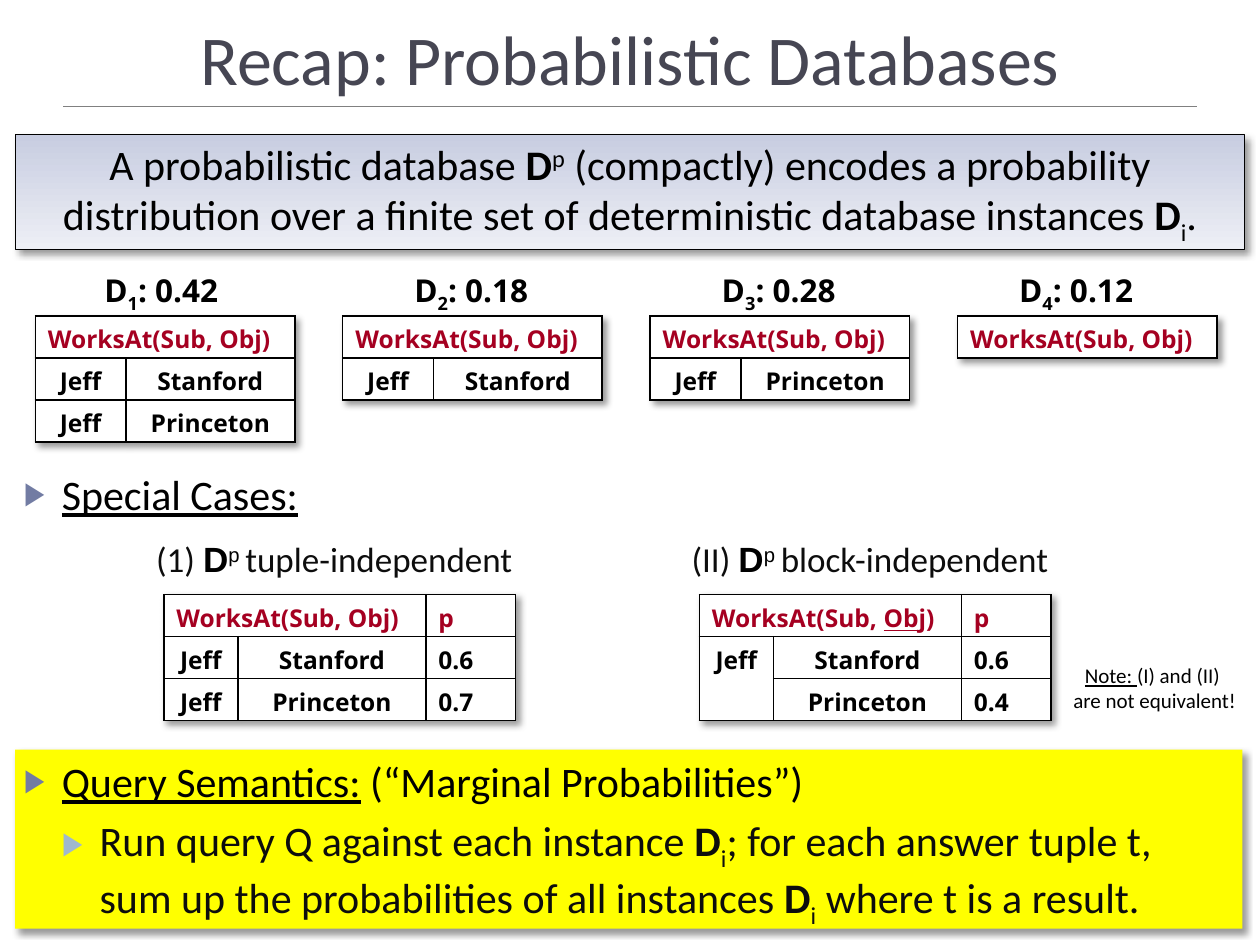
from lxml import etree
from pptx import Presentation
from pptx.dml.color import RGBColor
from pptx.enum.shapes import MSO_CONNECTOR, MSO_SHAPE
from pptx.enum.text import MSO_ANCHOR, MSO_AUTO_SIZE, PP_ALIGN
from pptx.oxml import parse_xml
from pptx.oxml.ns import nsdecls, qn
from pptx.util import Inches, Pt

BLACK, INK, RED = "000000", "0D0D0D", "A50021"
BASELINES = {"sub": "-25000", "sup": "30000"}
SHADOW = (
    f'<a:effectLst {nsdecls("a")}><a:outerShdw blurRad="50800" dist="38100" dir="2700000" '
    'algn="tl" rotWithShape="0"><a:srgbClr val="000000"><a:alpha val="40000"/></a:srgbClr>'
    "</a:outerShdw></a:effectLst>"
)
ROW_HEIGHT = 0.333


def color(value):
    return RGBColor.from_string(value)


def add_shadow(properties):
    for old in properties.findall(qn("a:effectLst")):
        properties.remove(old)
    properties.append(parse_xml(SHADOW))


def write(paragraph, runs, size, fill=BLACK, font="Calibri", bold=None, align=None):
    """Fill a paragraph; a run is a string or a tuple of text and b, u, sub, sup or Arial."""
    paragraph.font.size = Pt(size)
    paragraph.font.name = font
    paragraph.font.bold = bold
    paragraph.font.color.rgb = color(fill)
    paragraph.alignment = align
    for item in runs:
        text, *styles = (item,) if isinstance(item, str) else item
        run = paragraph.add_run()
        run.text = text
        for style in styles:
            if style == "b":
                run.font.bold = True
            elif style == "u":
                run.font.underline = True
            elif style == "Arial":
                run.font.name = style
                run.font.color.rgb = color(BLACK)
            else:
                run.font._element.set("baseline", BASELINES[style])


def add_text(slide, left, top, width, height, lines, size, wrap=False, **style):
    box = slide.shapes.add_textbox(Inches(left), Inches(top), Inches(width), Inches(height))
    frame = box.text_frame
    frame.word_wrap = wrap
    for index, runs in enumerate(lines):
        paragraph = frame.add_paragraph() if index else frame.paragraphs[0]
        write(paragraph, runs, size, **style)


def add_panel(slide, left, top, width, height):
    panel = slide.shapes.add_shape(
        MSO_SHAPE.RECTANGLE, Inches(left), Inches(top), Inches(width), Inches(height))
    panel.line.fill.background()
    return panel


def format_title(slide, left, top, width, height):
    title = slide.shapes.title
    title.left, title.top = Inches(left), Inches(top)
    title.width, title.height = Inches(width), Inches(height)
    title.text_frame.vertical_anchor = MSO_ANCHOR.BOTTOM
    title.text_frame.auto_size = MSO_AUTO_SIZE.NONE
    write(title.text_frame.paragraphs[0], ["Recap: Probabilistic Databases"], 40,
          "464653", align=PP_ALIGN.CENTER)
    bottom = Inches(top + height)
    rule = slide.shapes.add_connector(
        MSO_CONNECTOR.STRAIGHT, title.left, bottom, title.left + title.width, bottom)
    rule.line.color.rgb = color("808080")
    rule.line.width = Pt(0.25)
    add_shadow(rule._element.spPr)


def add_definition(slide, left, top, width, height):
    panel = add_panel(slide, left, top, width, height)
    panel.fill.gradient()
    panel.fill.gradient_angle = 270
    for stop, value in zip(panel.fill.gradient_stops, ("C8CDE1", "EDEFF5")):
        stop.color.rgb = color(value)
    panel.line.color.rgb = color(BLACK)
    panel.line.width = Pt(0.5)
    add_shadow(panel._element.spPr)
    write(panel.text_frame.paragraphs[0], [
        "A probabilistic database ", ("D", "b"), ("p", "sup"),
        " (compactly) encodes a probability distribution over a finite set of "
        "deterministic database instances ", ("D", "b"), ("i", "sub"), "."],
        24, align=PP_ALIGN.CENTER)


def add_bullet(paragraph, level, value, before):
    paragraph.level = level
    paragraph.space_before = Pt(before)
    properties = paragraph._p.get_or_add_pPr()
    properties.set("marL", str(Inches(0.3 * (level + 1))))
    properties.set("indent", str(Inches(-0.3)))
    bullet = (("buClr", {}), ("buSzPct", {"val": "76000"}),
              ("buFont", {"typeface": "Arial"}), ("buChar", {"char": "▶"}))
    position = len(properties.findall(qn("a:spcBef")))
    for offset, (tag, attributes) in enumerate(bullet):
        element = etree.Element(qn(f"a:{tag}"), attributes)
        if tag == "buClr":
            etree.SubElement(element, qn("a:srgbClr"), {"val": value})
        properties.insert(position + offset, element)


def format_body(slide, left, top, width, height):
    panel = add_panel(slide, 0.12, 5.95, 9.74, 1.42)
    panel.fill.solid()
    panel.fill.fore_color.rgb = color("FFFF00")
    add_shadow(panel._element.spPr)
    body = slide.placeholders[1]
    panel._element.addnext(body._element)
    body.left, body.top = Inches(left), Inches(top)
    body.width, body.height = Inches(width), Inches(height)
    frame = body.text_frame
    frame.auto_size = MSO_AUTO_SIZE.NONE
    points = [
        (0, "727CA3", 6, BLACK, [("Special Cases:", "u")]),
        (0, "727CA3", 135, BLACK, [("Query Semantics:", "u"), " (“Marginal Probabilities”)"]),
        (1, "9FB8CD", 5, INK, [
            "Run query Q against each instance ", ("D", "b"), ("i", "sub"),
            "; for each answer tuple t, sum up the probabilities of all instances ",
            ("D", "b"), ("i", "sub"), " where t is a result."]),
    ]
    for index, (level, bullet_color, before, fill, runs) in enumerate(points):
        paragraph = frame.add_paragraph() if index else frame.paragraphs[0]
        write(paragraph, runs, 24, fill)
        add_bullet(paragraph, level, bullet_color, before)


def format_cell(cell, runs, fill, align):
    cell.margin_top, cell.margin_bottom = Inches(0.05), 0
    cell.fill.solid()
    cell.fill.fore_color.rgb = color("FFFFFF")
    properties = cell._tc.get_or_add_tcPr()
    for position, side in enumerate("LRTB"):
        properties.insert(position, parse_xml(
            f'<a:ln{side} {nsdecls("a")} w="12700"><a:solidFill>'
            f'<a:srgbClr val="{BLACK}"/></a:solidFill></a:ln{side}>'))
    write(cell.text_frame.paragraphs[0], runs, 14, fill, "Noto Sans", True, align)


def add_relation(slide, left, top, widths, rows, header=("WorksAt(Sub, Obj)",)):
    """Draw a relation; a None cell joins the cell above it."""
    count = len(rows) + 1
    frame = slide.shapes.add_table(count, len(widths), Inches(left), Inches(top),
                                   Inches(sum(widths)), Inches(ROW_HEIGHT * count))
    table = frame.table
    table.first_row = table.horz_banding = False
    add_shadow_before_style(table._tbl.tblPr)
    for column, width in zip(table.columns, widths):
        column.width = Inches(width)
    titles = [header, [], ["p"]][:len(widths)]
    for column, runs in enumerate(titles):
        format_cell(table.cell(0, column), runs, RED, PP_ALIGN.LEFT)
    if len(widths) > 1:
        table.cell(0, 0).merge(table.cell(0, 1))
    for row, values in enumerate(rows, 1):
        for column, value in enumerate(values):
            align = PP_ALIGN.CENTER if column < 2 else PP_ALIGN.LEFT
            format_cell(table.cell(row, column), [value] if value else [], BLACK, align)
            if value is None:
                table.cell(row - 1, column).merge(table.cell(row, column))


def add_shadow_before_style(properties):
    add_shadow(properties)
    properties.insert(0, properties[-1])


def add_instances(slide, left, top, step):
    stanford, princeton = ("Jeff", "Stanford"), ("Jeff", "Princeton")
    instances = [("0.42", 0.73, [stanford, princeton]), ("0.18", 3.19, [stanford]),
                 ("0.28", 5.63, [princeton]), ("0.12", 7.99, [])]
    for index, (probability, caption_left, rows) in enumerate(instances):
        add_text(slide, caption_left, top, 1.2, 0.4,
                 [["D", (str(index + 1), "sub"), f": {probability}"]],
                 18, font="Noto Sans", bold=True)
        widths = (0.72, 1.34) if rows else (2.06,)
        add_relation(slide, left + step * index, top + 0.41, widths, rows)


def add_special_case(slide, left, top, number, kind, rows, **header):
    add_text(slide, left, top, 3.05, 0.44,
             [[f"({number}) ", ("D", "b", "Arial"), ("p ", "sup", "Arial"), kind]], 20, fill=INK)
    add_relation(slide, left + 0.16, top + 0.5, (0.59, 1.49, 0.71), rows, **header)


def main():
    presentation = Presentation()
    presentation.slide_width, presentation.slide_height = Inches(10), Inches(7.5)
    slide = presentation.slides.add_slide(presentation.slide_layouts[1])
    format_title(slide, 0.5, -0.01, 9, 0.85)
    format_body(slide, 0.09, 3.67, 9.76, 3.28)
    add_definition(slide, 0.12, 1.07, 9.76, 0.91)
    add_instances(slide, 0.28, 2.1, 2.44)
    add_special_case(slide, 1.14, 4.22, "1", "tuple-independent",
                     [("Jeff", "Stanford", "0.6"), ("Jeff", "Princeton", "0.7")])
    add_special_case(slide, 5.39, 4.22, "II", "block-independent",
                     [("Jeff", "Stanford", "0.6"), (None, "Princeton", "0.4")],
                     header=("WorksAt(Sub, ", ("Ob", "u"), "j)"))
    add_text(slide, 8.41, 5.21, 1.51, 0.5,
             [[("Note: ", "u"), "(I) and (II) "], ["are not equivalent!"]],
             12, wrap=True, align=PP_ALIGN.CENTER)
    presentation.save("out.pptx")


if __name__ == "__main__":
    main()
